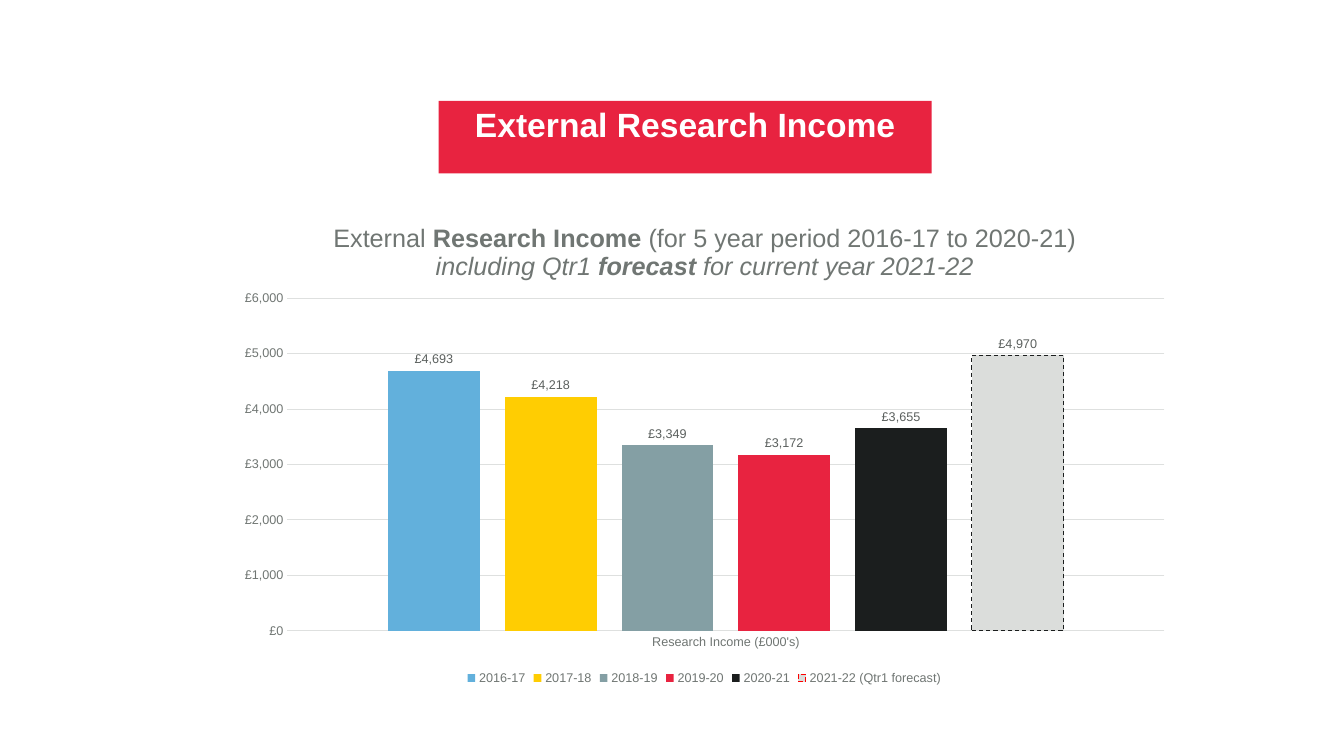
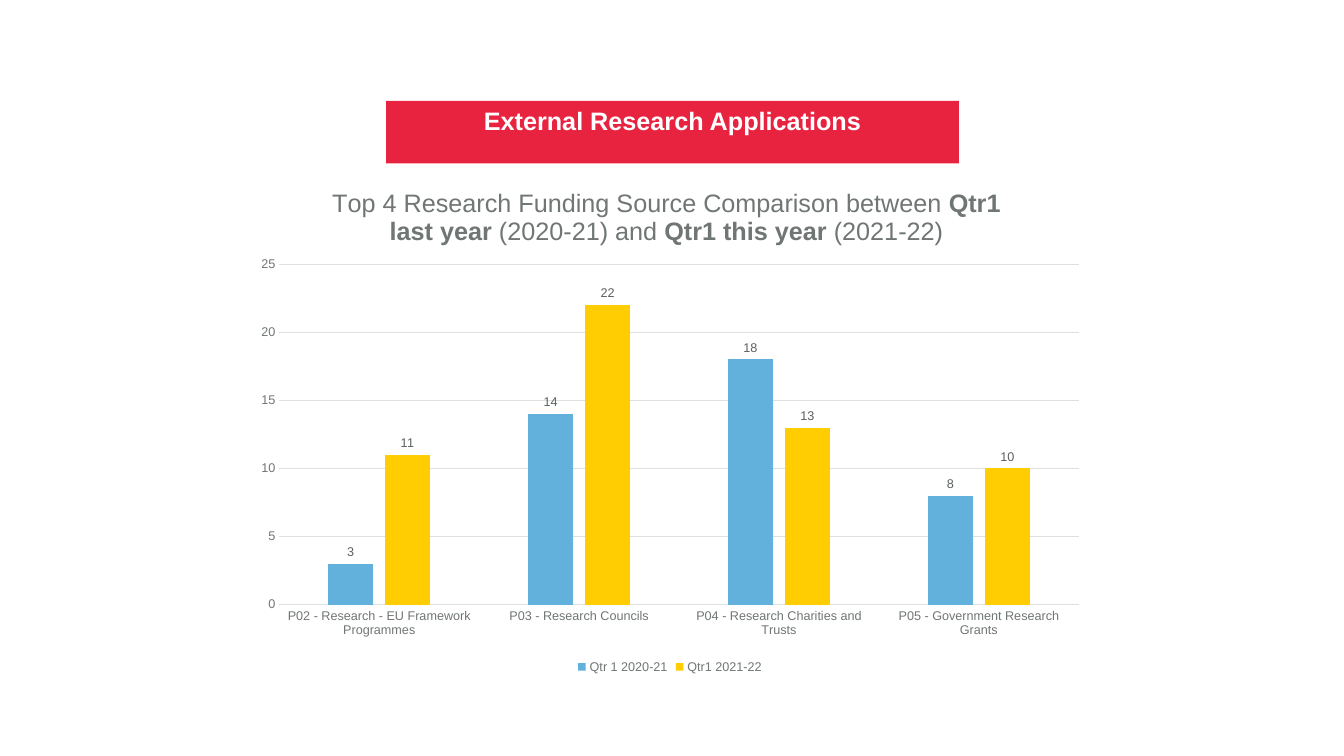
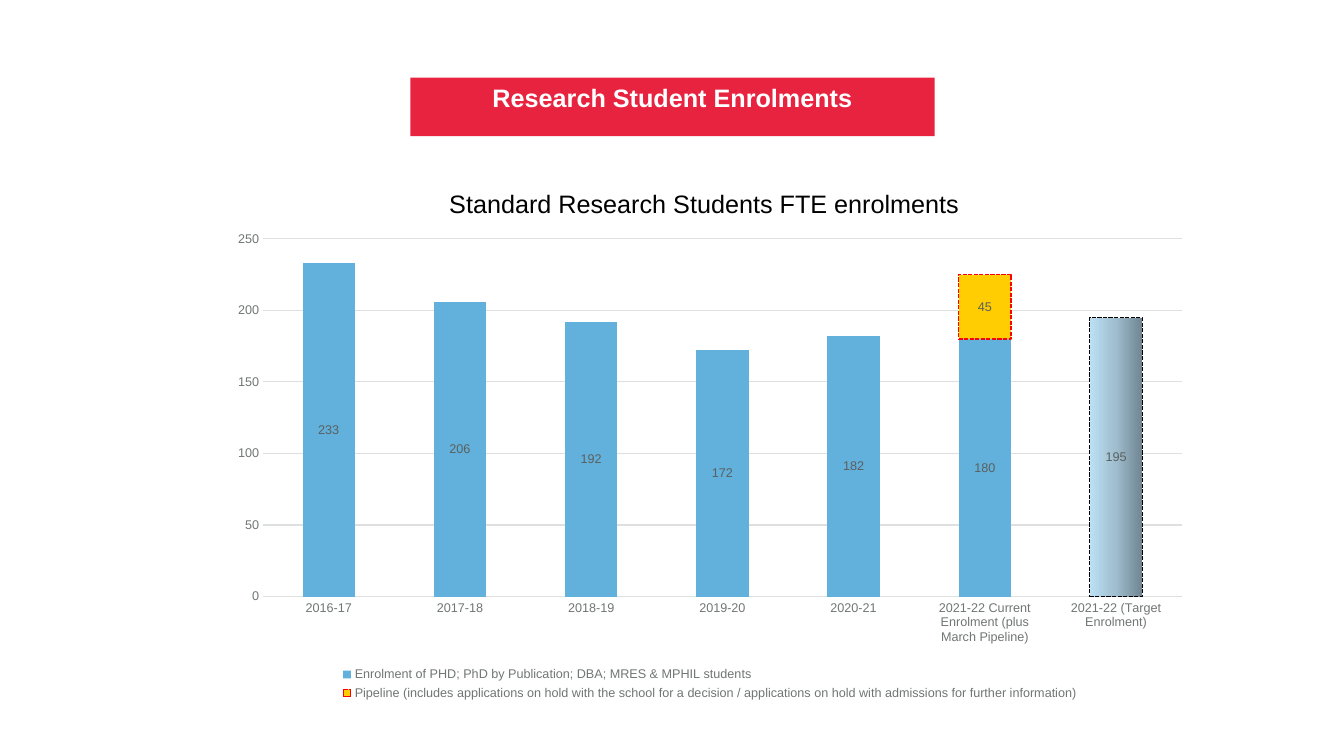
from lxml.etree import SubElement
from pptx import Presentation
from pptx.chart.data import CategoryChartData
from pptx.dml.color import RGBColor
from pptx.enum.chart import XL_CHART_TYPE as ChartType
from pptx.enum.chart import XL_LABEL_POSITION as LabelPosition
from pptx.enum.chart import XL_LEGEND_POSITION as LegendPosition
from pptx.enum.chart import XL_TICK_MARK as TickMark
from pptx.enum.dml import MSO_LINE as Dash
from pptx.enum.text import MSO_ANCHOR, MSO_AUTO_SIZE, PP_ALIGN
from pptx.oxml.ns import qn
from pptx.util import Inches, Pt

FONT = "Arial"
COLOURS = {
    "white": "FFFFFF", "black": "000000", "red": "E82340", "blue": "62B0DC",
    "yellow": "FFCD02", "slate": "849FA4", "ink": "1B1E1E", "silver": "DBDDDB",
    "text": "707673", "label": "5B605E", "grid": "DEE0DF", "outline": "FF0000",
}
TARGET_GRADIENT = [(0, "708591"), (50, "9FBDCE"), (100, "BDE0F5")]
POUNDS = '"£"#,##0'


def colour(name):
    return RGBColor.from_string(COLOURS[name])


def style_font(font, size, name, bold=False, italic=False):
    font.name, font.size = FONT, Pt(size)
    font.bold, font.italic = bold, italic
    font.color.rgb = colour(name)


def style_line(line, name, width=0.75, dash=None):
    line.color.rgb = colour(name)
    line.width = Pt(width)
    if dash:
        line.dash_style = dash


def add_banner_slide(presentation, text, box, size):
    """Slide whose title is a red banner."""
    slide = presentation.slides.add_slide(presentation.slide_layouts[5])
    banner = slide.shapes.title
    banner.left, banner.top, banner.width, banner.height = map(Inches, box)
    banner.fill.solid()
    banner.fill.fore_color.rgb = colour("red")
    frame = banner.text_frame
    frame.text = text
    frame.word_wrap = True
    frame.auto_size = MSO_AUTO_SIZE.NONE
    frame.vertical_anchor = MSO_ANCHOR.TOP
    frame.margin_left = frame.margin_right = Inches(0.31)
    frame.margin_top, frame.margin_bottom = Inches(0.08), 0
    paragraph = frame.paragraphs[0]
    paragraph.alignment = PP_ALIGN.CENTER
    paragraph.line_spacing = 0.9
    style_font(paragraph.runs[0].font, size, "white", bold=True)
    return slide


def set_layout(parent, **values):
    """Give a chart part a manual layout in fractions of the chart."""
    layout = parent.find(qn("c:layout"))
    if layout is None:
        layout = SubElement(parent, qn("c:layout"))
        anchor = parent.find(qn("c:tx"))
        if anchor is None:
            parent.insert(0, layout)
        else:
            anchor.addnext(layout)
    manual = SubElement(layout, qn("c:manualLayout"))
    if "w" in values:
        SubElement(manual, qn("c:layoutTarget")).set("val", "inner")
    for mode in ("xMode", "yMode"):
        SubElement(manual, qn(f"c:{mode}")).set("val", "edge")
    for key, value in values.items():
        SubElement(manual, qn(f"c:{key}")).set("val", f"{value:.4f}")


def set_chart_title(chart, lines, name, left, top):
    """Lines are lists of (text, style); style holds b and i."""
    chart.has_title = True
    title = chart.chart_title
    title.include_in_layout = False
    frame = title.text_frame
    for index, line in enumerate(lines):
        paragraph = frame.add_paragraph() if index else frame.paragraphs[0]
        paragraph.alignment = PP_ALIGN.CENTER
        for text, style in line:
            run = paragraph.add_run()
            run.text = text
            style_font(run.font, 18, name, "b" in style, "i" in style)
    set_layout(title._element, x=left, y=top)


def style_axes(chart, maximum, step, number_format):
    category, value = chart.category_axis, chart.value_axis
    for axis in (category, value):
        axis.major_tick_mark = axis.minor_tick_mark = TickMark.NONE
        style_font(axis.tick_labels.font, 9, "text")
    style_line(category.format.line, "grid")
    value.format.line.fill.background()
    value.has_major_gridlines = True
    style_line(value.major_gridlines.format.line, "grid")
    value.minimum_scale, value.maximum_scale, value.major_unit = 0, maximum, step
    value.tick_labels.number_format = number_format
    value.tick_labels.number_format_is_linked = False


def style_series(series, fill, position, number_format):
    series.invert_if_negative = False
    series.format.fill.solid()
    series.format.fill.fore_color.rgb = colour(fill)
    labels = series.data_labels
    labels.show_value = True
    labels.position = position
    labels.number_format = number_format
    labels.number_format_is_linked = False
    style_font(labels.font, 9, "label")


def add_column_chart(slide, box, plot, categories, series, maximum, step,
                     stacked=False, number_format="General"):
    """Series are (name, values, colour); plot is the inner area in inches."""
    data = CategoryChartData()
    data.categories = categories
    for name, values, _ in series:
        data.add_series(name, values)
    kind = ChartType.COLUMN_STACKED if stacked else ChartType.COLUMN_CLUSTERED
    chart = slide.shapes.add_chart(kind, *map(Inches, box), data).chart
    style_font(chart.font, 10, "text")
    style_axes(chart, maximum, step, number_format)

    columns = chart.plots[0]
    columns.vary_by_categories = False
    columns.gap_width, columns.overlap = (150, 100) if stacked else (219, -27)
    position = LabelPosition.CENTER if stacked else LabelPosition.OUTSIDE_END
    for column, (_, _, fill) in zip(columns.series, series):
        style_series(column, fill, position, number_format)

    chart.has_legend = True
    chart.legend.position = LegendPosition.BOTTOM
    chart.legend.include_in_layout = False
    style_font(chart.legend.font, 9, "text")

    left, top, width, height = box
    plot_left, plot_top, plot_right, plot_bottom = plot
    set_layout(chart._chartSpace.find(".//" + qn("c:plotArea")),
               x=(plot_left - left) / width, y=(plot_top - top) / height,
               w=(plot_right - plot_left) / width,
               h=(plot_bottom - plot_top) / height)
    return chart


def fill_gradient(series, point, stops):
    point.format.fill.gradient()
    point.format.fill.gradient_angle = 180
    stop_list = series._element.find(".//" + qn("a:gsLst"))
    for stop in list(stop_list):
        stop_list.remove(stop)
    for percent, value in stops:
        stop = SubElement(stop_list, qn("a:gs"), pos=str(percent * 1000))
        SubElement(stop, qn("a:srgbClr"), val=value)


def add_income_slide(presentation):
    slide = add_banner_slide(presentation, "External Research Income",
                             (4.35, 1, 4.89, 0.72), 24)
    chart = add_column_chart(
        slide, (2.23, 1.98, 9.51, 4.86), (2.85, 2.96, 11.55, 6.26),
        ["Research Income (£000's)"],
        [("2016-17", [4693], "blue"), ("2017-18", [4218], "yellow"),
         ("2018-19", [3349], "slate"), ("2019-20", [3172], "red"),
         ("2020-21", [3655], "ink"),
         ("2021-22 (Qtr1 forecast)", [4970], "silver")],
        6000, 1000, number_format=POUNDS)
    set_chart_title(chart, [
        [("External ", ""), ("Research Income", "b"),
         (" (for 5 year period 2016-17 to 2020-21)", "")],
        [("including Qtr1 ", "i"), ("forecast", "bi"),
         (" for current year 2021-22", "i")],
    ], "text", 0.11, 0.04)
    # Forecast column: dashed outline
    forecast = chart.plots[0].series[5]
    style_line(forecast.format.line, "outline", dash=Dash.DASH)
    point = forecast.points[0].format
    point.fill.solid()
    point.fill.fore_color.rgb = colour("silver")
    style_line(point.line, "ink", dash=Dash.DASH)


def add_applications_slide(presentation):
    slide = add_banner_slide(presentation, "External Research Applications",
                             (3.83, 1, 5.68, 0.62), 18)
    chart = add_column_chart(
        slide, (2.42, 1.62, 8.45, 5.11), (2.77, 2.62, 10.7, 6),
        ["P02 - Research - EU Framework Programmes", "P03 - Research Councils",
         "P04 - Research Charities and Trusts",
         "P05 - Government Research Grants"],
        [("Qtr 1 2020-21", [3, 14, 18, 8], "blue"),
         ("Qtr1 2021-22", [11, 22, 13, 10], "yellow")],
        25, 5)
    set_chart_title(chart, [
        [("Top 4 Research Funding Source Comparison between ", ""),
         ("Qtr1 last year", "b"), (" (2020-21) and ", ""),
         ("Qtr1 this year", "b"), (" (2021-22)", "")],
    ], "text", 0.1, 0.04)


def add_enrolments_slide(presentation):
    slide = add_banner_slide(presentation, "Research Student Enrolments",
                             (4.07, 0.77, 5.2, 0.58), 18)
    chart = add_column_chart(
        slide, (2.17, 1.6, 9.74, 5.39), (2.61, 2.37, 11.72, 5.92),
        ["2016-17", "2017-18", "2018-19", "2019-20", "2020-21",
         "2021-22 Current Enrolment (plus March Pipeline)",
         "2021-22 (Target Enrolment)"],
        [("Enrolment of PHD; PhD by Publication; DBA; MRES & MPHIL students",
          [233, 206, 192, 172, 182, 180, 195], "blue"),
         ("Pipeline (includes applications on hold with the school for a "
          "decision / applications on hold with admissions for further "
          "information)", [None] * 5 + [45, None], "yellow")],
        250, 50, stacked=True)
    set_chart_title(chart, [[("Standard Research Students FTE enrolments", "")]],
                    "black", 0.23, 0.04)
    # Pipeline outline and shaded target column
    enrolment, pipeline = chart.plots[0].series
    style_line(pipeline.format.line, "outline", 1, Dash.SQUARE_DOT)
    target = enrolment.points[6]
    fill_gradient(enrolment, target, TARGET_GRADIENT)
    style_line(target.format.line, "black", 1, Dash.SQUARE_DOT)


def main():
    presentation = Presentation()
    presentation.slide_width, presentation.slide_height = Inches(13.33), Inches(7.5)
    add_income_slide(presentation)
    add_applications_slide(presentation)
    add_enrolments_slide(presentation)
    presentation.save("out.pptx")


if __name__ == "__main__":
    main()
